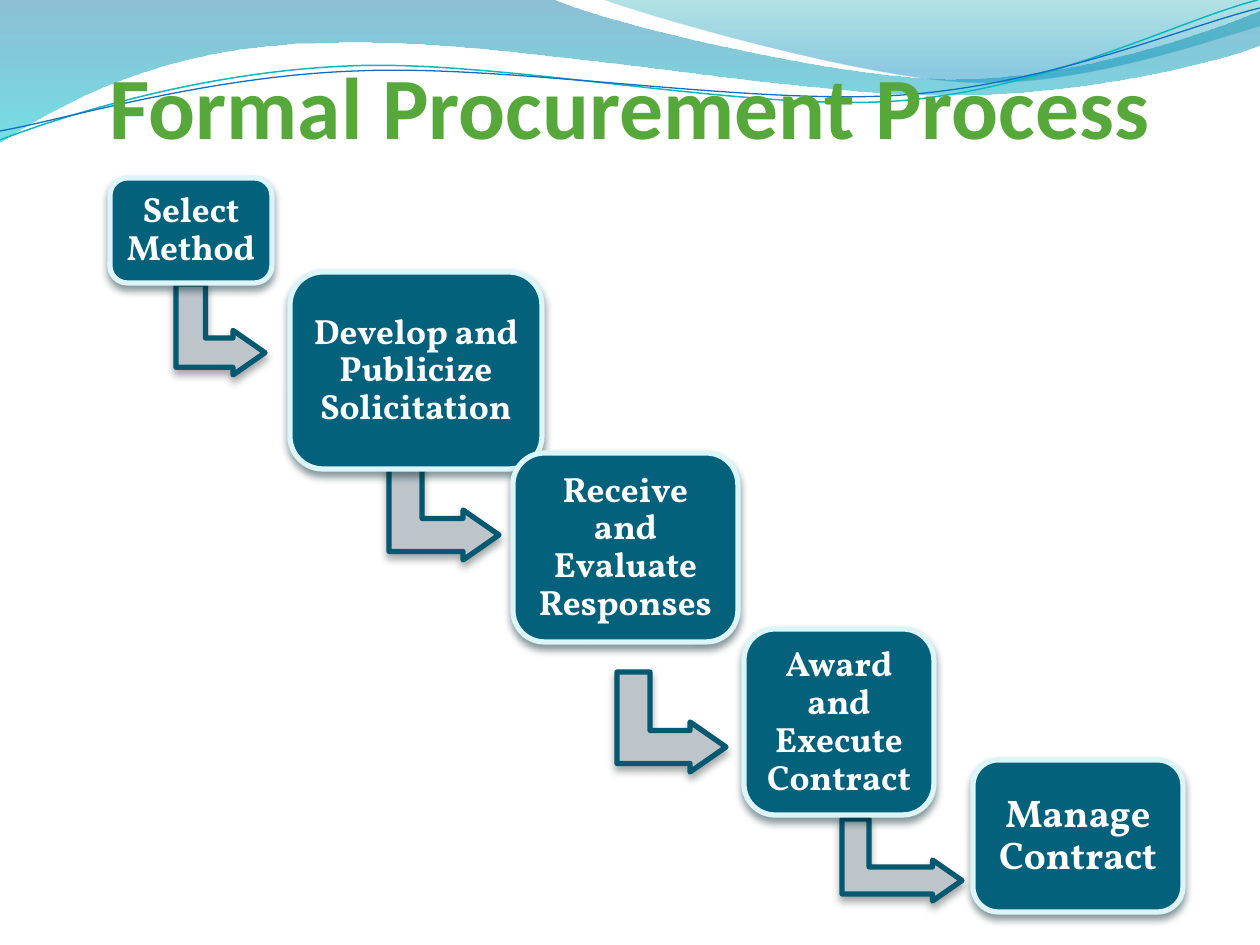
import pptx
import pptx.util
import pptx.dml.color
import pptx.enum.dml
import pptx.enum.shapes
import pptx.enum.text
import pptx.oxml
import pptx.oxml.ns
from dataclasses import dataclass

EMU_PER_PX = 914400 / 126


@dataclass(frozen=True)
class Theme:
    title_font: str = "Calibri"
    step_font: str = "Vollkorn"
    title_size: int = 50
    title_color: str = "55A839"
    step_text: str = "FFFFFF"
    step_fill: str = "04617B"
    step_line: str = "DBF5F9"
    step_shadow: str = "00232C"
    arrow_fill: str = "BDC5CB"
    arrow_line: str = "045870"
    arrow_shadow: str = "424547"
    outline: int = 3
    wide_wave: tuple = ((0, "0074A1", 45), (1, "00C6CF", 55))
    right_wave: tuple = ((0, "00A1A9", 30), (0.8, "008BBF", 45))
    teal_line: tuple = ("0AB8BF", 0.85)
    blue_line: tuple = ("0F6FC6", 0.75)


THEME = Theme()

WIDE_WAVE = [(0, 0), (554, 0),
             (600, 21, 837, 79, 955, 79), (1075, 79, 1207, 33, 1260, 11),
             (1260, 45), (1239, 55, 1096, 96, 940, 95),
             (784, 95, 481, 35, 324, 43), (163, 45, 58, 105, 0, 142), (0, 0)]
RIGHT_WAVE = [(604, 0), (641, 14, 859, 78, 969, 82),
              (1079, 87, 1211, 40, 1260, 26), (1260, 0), (604, 0)]
TEAL_LINE = [(0, 140), (60, 117, 199, 72, 349, 66),
             (498, 59, 747, 112, 898, 101), (1050, 89, 1182, 19, 1258, 0)]
BLUE_LINE = [(0, 131), (59, 121, 207, 76, 357, 71),
             (508, 64, 752, 106, 903, 95), (1053, 84, 1186, 26, 1260, 8)]

FREE_ARROW = (617, 672, 109, 100)
ARROWS = [(176, 284, 89, 91), (389, 460, 110, 100), (643, 562, 83, 73), (842, 819, 120, 82)]
STEPS = [
    ("Select Method", (110, 178, 162, 105), 20),
    ("Develop and Publicize Solicitation", (290, 272, 252, 197), 20),
    ("Receive and Evaluate Responses", (513, 453, 225, 189), 20),
    ("Award and Execute Contract", (744, 629, 190, 186), 20),
    ("Manage Contract", (973, 760, 210, 152), 22),
]


def px(length):
    return pptx.util.Emu(round(length * EMU_PER_PX))


def rgb(value):
    return pptx.dml.color.RGBColor.from_string(value)


def parse_markup(markup):
    namespace = pptx.oxml.ns.nsdecls("a")
    return pptx.oxml.parse_xml(markup.replace(">", f" {namespace}>", 1))


def style_shape(shape, fill, line, shadow):
    shape.fill.solid()
    shape.fill.fore_color.rgb = rgb(fill)
    shape.line.color.rgb = rgb(line)
    shape.line.width = pptx.util.Pt(THEME.outline)
    shape.shadow.inherit = False
    effects = shape.element.spPr.find(pptx.oxml.ns.qn("a:effectLst"))
    effects.append(parse_markup(
        '<a:outerShdw blurRad="57150" dist="38100" dir="5400000" rotWithShape="0">'
        f'<a:srgbClr val="{shadow}"><a:alpha val="48000"/></a:srgbClr></a:outerShdw>'))


def format_text(frame, text, font_name, size, color, inset):
    frame.text = text
    frame.word_wrap = True
    frame.auto_size = pptx.enum.text.MSO_AUTO_SIZE.NONE
    frame.margin_left = frame.margin_right = px(inset)
    frame.margin_top = frame.margin_bottom = px(inset)
    paragraph = frame.paragraphs[0]
    paragraph.alignment = pptx.enum.text.PP_ALIGN.CENTER
    paragraph.font.name = font_name
    paragraph.font.size = pptx.util.Pt(size)
    paragraph.font.bold = True
    paragraph.font.color.rgb = rgb(color)
    return paragraph


def add_outline(slide, box, segments, close):
    left, top = box[:2]
    points = [(px(left + segment[index]), px(top + segment[index + 1]))
              for segment in segments for index in range(0, len(segment), 2)]
    builder = slide.shapes.build_freeform(*points[0])
    builder.add_line_segments(points[1:], close=close)
    shape = builder.convert_to_shape()
    shape.shadow.inherit = False
    lines = iter(list(shape.element.spPr.iter(pptx.oxml.ns.qn("a:lnTo"))))
    for segment in segments[1:]:
        line = next(lines)
        if len(segment) == 6:
            curve = parse_markup("<a:cubicBezTo></a:cubicBezTo>")
            line.addprevious(curve)
            for control in (line, next(lines), next(lines)):
                curve.append(control[0])
                control.getparent().remove(control)
    return shape


def add_header_waves(slide, box):
    for segments, stops in ((WIDE_WAVE, THEME.wide_wave), (RIGHT_WAVE, THEME.right_wave)):
        shape = add_outline(slide, box, segments, True)
        shape.line.fill.background()
        shape.fill.gradient()
        shape.fill.gradient_angle = 270
        for stop, (position, color, opacity) in zip(shape.fill.gradient_stops, stops):
            stop.position = position
            stop.color.rgb = rgb(color)
        colors = shape.element.spPr.iter(pptx.oxml.ns.qn("a:srgbClr"))
        for element, (position, color, opacity) in zip(colors, stops):
            element.append(parse_markup(f'<a:alpha val="{opacity * 1000}"></a:alpha>'))
    for segments, (color, width) in ((TEAL_LINE, THEME.teal_line), (BLUE_LINE, THEME.blue_line)):
        shape = add_outline(slide, box, segments, False)
        shape.fill.background()
        shape.line.color.rgb = rgb(color)
        shape.line.width = pptx.util.Pt(width)


def add_arrow(slide, box):
    left, top, width, height = box
    shift = (width - height) / 2
    arrow = slide.shapes.add_shape(pptx.enum.shapes.MSO_SHAPE.BENT_UP_ARROW,
                                   px(left + shift), px(top - shift), px(height), px(width))
    arrow.rotation = 90
    for index, value in enumerate((0.33, 0.25, 0.36)):
        arrow.adjustments[index] = value
    style_shape(arrow, THEME.arrow_fill, THEME.arrow_line, THEME.arrow_shadow)


def add_step(slide, box, text, size):
    step = slide.shapes.add_shape(pptx.enum.shapes.MSO_SHAPE.ROUNDED_RECTANGLE, *map(px, box))
    style_shape(step, THEME.step_fill, THEME.step_line, THEME.step_shadow)
    paragraph = format_text(step.text_frame, text, THEME.step_font, size, THEME.step_text, 10)
    paragraph.line_spacing = 0.9
    step.text_frame.vertical_anchor = pptx.enum.text.MSO_ANCHOR.MIDDLE


def add_process(slide, box):
    left, top = box[:2]

    def place(part):
        return (left + part[0], top + part[1], *part[2:])

    for arrow_box in (FREE_ARROW, *ARROWS):
        add_arrow(slide, place(arrow_box))
    for text, step_box, size in STEPS:
        add_step(slide, place(step_box), text, size)


def add_title(slide, box):
    title = slide.shapes.title
    title.left, title.top, title.width, title.height = map(px, box)
    format_text(title.text_frame, "Formal Procurement Process", THEME.title_font,
                THEME.title_size, THEME.title_color, 0)
    title.text_frame.margin_top = px(6)
    title.text_frame.vertical_anchor = pptx.enum.text.MSO_ANCHOR.BOTTOM
    slide.shapes.element.append(title.element)


def main():
    presentation = pptx.Presentation()
    presentation.slide_width, presentation.slide_height = px(1260), px(945)
    slide = presentation.slides.add_slide(presentation.slide_layouts[5])
    page = (0, 0, 1260, 945)
    add_header_waves(slide, page)
    add_process(slide, page)
    add_title(slide, (0, 0, 1260, 157))
    presentation.save("out.pptx")


if __name__ == "__main__":
    main()
